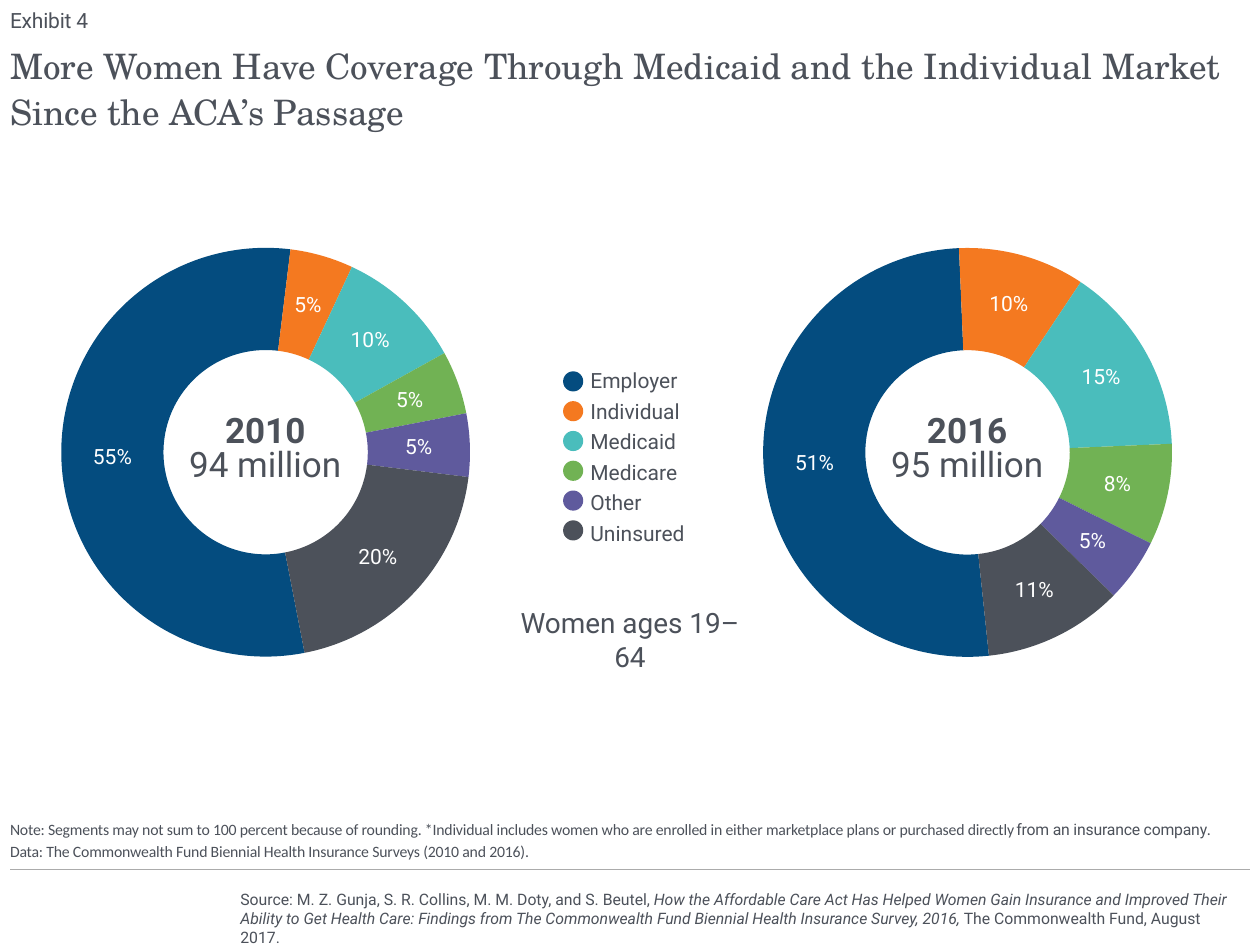
from lxml import etree
from pptx import Presentation
from pptx.chart.data import CategoryChartData
from pptx.dml.color import RGBColor
from pptx.enum.chart import XL_CHART_TYPE as ChartType
from pptx.enum.shapes import MSO_CONNECTOR as Connector, MSO_SHAPE as Shape
from pptx.enum.text import MSO_ANCHOR as Anchor, PP_ALIGN as Align
from pptx.oxml import parse_xml
from pptx.oxml.ns import nsdecls, qn
from pptx.util import Pt

GRAY = RGBColor(0x4C, 0x51, 0x5A)
WHITE = RGBColor(0xFF, 0xFF, 0xFF)
RULE = RGBColor(0xAB, 0xAB, 0xAB)
COVERAGE = {
    "Employer": RGBColor(0x04, 0x4C, 0x7F),
    "Individual": RGBColor(0xF4, 0x79, 0x20),
    "Medicaid": RGBColor(0x4A, 0xBD, 0xBC),
    "Medicare": RGBColor(0x71, 0xB2, 0x54),
    "Other": RGBColor(0x5F, 0x5A, 0x9D),
    "Uninsured": GRAY,
}
FONT = "Roboto"
MARGIN, CONTENT_WIDTH = 5.75, 708.5


def style(font, size, name=FONT, color=GRAY):
    font.size, font.name, font.color.rgb = Pt(size), name, color


def add_text(box, paragraphs, size, name=FONT, inset=True):
    """Add a text box; each paragraph is a list of run texts."""
    frame = slide.shapes.add_textbox(*map(Pt, box)).text_frame
    frame.word_wrap = True
    if not inset:
        frame.margin_left = frame.margin_right = 0
        frame.margin_top = frame.margin_bottom = 0
        frame.vertical_anchor = Anchor.BOTTOM
    for index, texts in enumerate(paragraphs):
        paragraph = frame.add_paragraph() if index else frame.paragraphs[0]
        for text in texts:
            run = paragraph.add_run()
            run.text = text
            style(run.font, size, name)
            if not inset:
                run.font._element.set("spc", "-10")
    return frame


prs = Presentation()
prs.slide_width, prs.slide_height = Pt(720), Pt(540)
slide = prs.slides.add_slide(prs.slide_layouts[5])

# Exhibit number and title
add_text((MARGIN, 0.7, CONTENT_WIDTH, 18), [["Exhibit 4"]], 12, inset=False)
title = slide.shapes.title
title.left, title.top, title.width, title.height = map(
    Pt, (MARGIN, 23, CONTENT_WIDTH, 60))
heading = title.text_frame
heading.text = ("More Women Have Coverage Through Medicaid and the Individual "
                "Market Since the ACA’s Passage")
heading.word_wrap = True
heading.vertical_anchor = Anchor.TOP
heading.margin_left = heading.margin_right = 0
heading.margin_top = heading.margin_bottom = 0
heading.paragraphs[0].alignment = Align.LEFT
heading.paragraphs[0].line_spacing = 1.1
style(heading.paragraphs[0].runs[0].font, 20, "TeX Gyre Schola")

# Doughnuts: year, women, shares, start angle, chart box, plot area, centre box
years = [
    ("2010", "94 million", (55, 5, 10, 5, 5, 20), 169,
     (-14.4, 129.6, 345.6, 272.2), (0.143, 0.044, 0.676, 0.859),
     (93.6, 234.7, 116, 46)),
    ("2016", "95 million", (51, 10, 15, 8, 5, 11), 174,
     (414, 73.4, 334.8, 329.8), (0.066, 0.207, 0.698, 0.709),
     (493.2, 234.7, 119, 46)),
]
for year, women, shares, start, chart_box, plot_box, centre_box in years:
    data = CategoryChartData()
    data.categories = list(COVERAGE)
    data.add_series(year, shares)
    chart = slide.shapes.add_chart(
        ChartType.DOUGHNUT, *map(Pt, chart_box), data).chart
    chart.has_legend = chart.has_title = False
    style(chart.font, 10)
    plot = chart.plots[0]
    plot.vary_by_categories = True
    for index, color in enumerate(COVERAGE.values()):
        wedge = plot.series[0].points[index].format
        wedge.fill.solid()
        wedge.fill.fore_color.rgb = color
        wedge.line.fill.background()
    plot.has_data_labels = True
    labels = plot.data_labels
    labels.show_percentage, labels.show_value = True, False
    labels.number_format, labels.number_format_is_linked = "0%", False
    style(labels.font, 12, color=WHITE)

    # Ring geometry and the fixed plot area
    ring = plot._element
    ring.find(qn("c:firstSliceAng")).set("val", str(start))
    ring.find(qn("c:holeSize")).set("val", "50")
    area = ring.getparent()
    for old in area.findall(qn("c:layout")):
        area.remove(old)
    settings = [("layoutTarget", "inner"), ("xMode", "edge"), ("yMode", "edge")]
    settings += zip("xywh", plot_box)
    layout = parse_xml(f"<c:layout {nsdecls('c')}><c:manualLayout/></c:layout>")
    for tag, value in settings:
        etree.SubElement(layout[0], qn(f"c:{tag}")).set("val", str(value))
    area.insert(0, layout)

    centre = add_text(centre_box, [[year], [women]], 20)
    for paragraph in centre.paragraphs:
        paragraph.alignment = Align.CENTER
        paragraph.line_spacing = 0.8
    centre.paragraphs[0].runs[0].font.bold = True

# Population
ages = add_text((285, 342.7, 150, 26.6), [["Women ages 19–64"]], 16)
ages.paragraphs[0].alignment = Align.CENTER

# Legend
legend = add_text((330.3, 206.6, 68, 109.5), [[name] for name in COVERAGE], 12)
legend.word_wrap = False
for paragraph in legend.paragraphs:
    paragraph.space_after = Pt(3)
for index, color in enumerate(COVERAGE.values()):
    dot = slide.shapes.add_shape(
        Shape.OVAL, Pt(321.8), Pt(212.2 + 17.03 * index), Pt(11.5), Pt(11.5))
    dot.shadow.inherit = False
    dot.fill.solid()
    dot.fill.fore_color.rgb = color
    dot.line.fill.background()

# Notes
notes = add_text((MARGIN, 453, CONTENT_WIDTH, 39), [
    ["Note: Segments may not sum to 100 percent because of rounding. "
     "*Individual includes women who are enrolled in either marketplace plans "
     "or purchased directly ", "from an insurance company", "."],
    ["Data: The Commonwealth Fund Biennial Health Insurance Surveys "
     "(2010 and 2016)."],
], 9, "Calibri", inset=False)
notes.paragraphs[0].runs[1].font.name = FONT
notes.paragraphs[1].space_before = Pt(1.8)

# Rule and source
rule = slide.shapes.add_connector(
    Connector.STRAIGHT, Pt(MARGIN), Pt(496.8),
    Pt(MARGIN + CONTENT_WIDTH), Pt(496.8))
rule.line.color.rgb, rule.line.width = RULE, Pt(0.75)
etree.SubElement(rule._element.spPr, qn("a:effectLst"))
source = add_text((130.3, 504.7, 584, 29), [[
    "Source: M. Z. Gunja, S. R. Collins, M. M. Doty, and S. Beutel, ",
    "How the Affordable Care Act Has Helped Women Gain Insurance and Improved "
    "Their Ability to Get Health Care: Findings from The Commonwealth Fund "
    "Biennial Health Insurance Survey, 2016, ",
    "The Commonwealth Fund, August 2017."]], 9)
source.paragraphs[0].runs[1].font.italic = True

prs.save("out.pptx")
